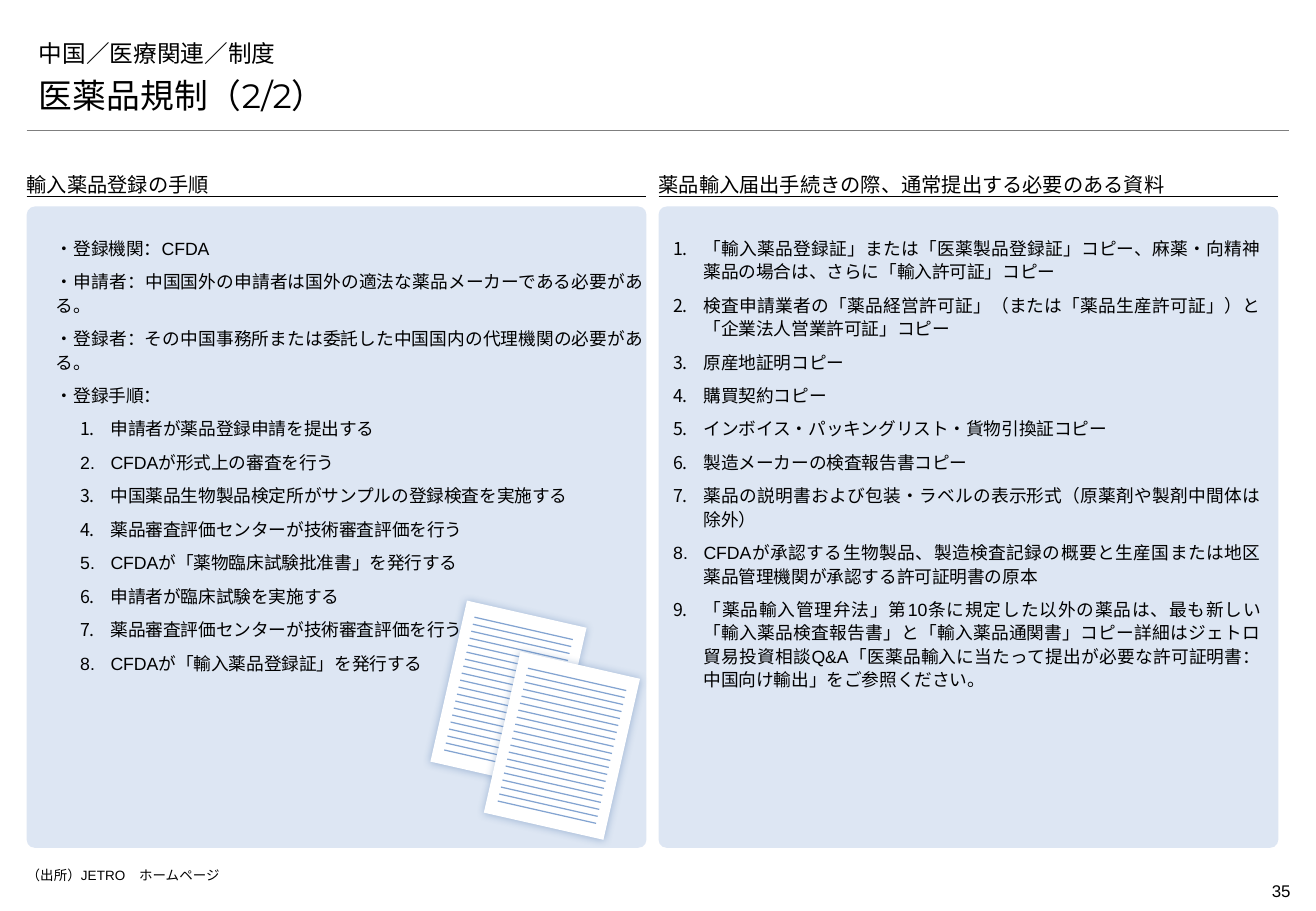
"""Builds the slide on pharmaceutical regulation in China (2/2)."""
from math import cos, radians, sin

from lxml import etree
from pptx import Presentation
from pptx.dml.color import RGBColor
from pptx.enum.shapes import MSO_CONNECTOR, MSO_SHAPE
from pptx.enum.text import MSO_ANCHOR, MSO_AUTO_SIZE, PP_ALIGN
from pptx.oxml.ns import qn
from pptx.util import Inches, Pt

STRAIGHT = MSO_CONNECTOR.STRAIGHT
RECTANGLE, ROUNDED = MSO_SHAPE.RECTANGLE, MSO_SHAPE.ROUNDED_RECTANGLE
TOP, BOTTOM = MSO_ANCHOR.TOP, MSO_ANCHOR.BOTTOM
LEFT, RIGHT, JUSTIFY = PP_ALIGN.LEFT, PP_ALIGN.RIGHT, PP_ALIGN.JUSTIFY

COLORS = {
    "text": "000000",
    "panel": "DDE6F3",
    "title_rule": "7F7F7F",
    "paper": "FFFFFF",
    "paper_line": "83A4D1",
    "paper_shadow": "3D6AA7",
}
BODY_FONT, HEADING_FONT = "Arial", "Montserrat"

TITLE = "中国／医療関連／制度"
SUBTITLE = "医薬品規制（2/2）"
SOURCE = "（出所）JETRO\u3000ホームページ".replace("\u3000", "　")
PAGE_NUMBER = "35"
COLUMNS = [
    {
        "heading": "輸入薬品登録の手順",
        "left": 0.22,
        "margins": (0.24, 0.24, 0.12, 0.24),
        "number_indent": 0.45,
        "points": [
            "・登録機関：CFDA",
            "・申請者：中国国外の申請者は国外の適法な薬品メーカーである必要がある。",
            "・登録者：その中国事務所または委託した中国国内の代理機関の必要がある。",
            "・登録手順：",
        ],
        "numbered": [
            "申請者が薬品登録申請を提出する",
            "CFDAが形式上の審査を行う",
            "中国薬品生物製品検定所がサンプルの登録検査を実施する",
            "薬品審査評価センターが技術審査評価を行う",
            "CFDAが「薬物臨床試験批准書」を発行する",
            "申請者が臨床試験を実施する",
            "薬品審査評価センターが技術審査評価を行う",
            "CFDAが「輸入薬品登録証」を発行する",
        ],
    },
    {
        "heading": "薬品輸入届出手続きの際、通常提出する必要のある資料",
        "left": 5.42,
        "margins": (0.12, 0.24, 0.24, 0.24),
        "number_indent": 0.25,
        "points": [],
        "numbered": [
            "「輸入薬品登録証」または「医薬製品登録証」コピー、麻薬・向精神薬品の場合は、さらに「輸入許可証」コピー",
            "検査申請業者の「薬品経営許可証」（または「薬品生産許可証」）と「企業法人営業許可証」コピー",
            "原産地証明コピー",
            "購買契約コピー",
            "インボイス・パッキングリスト・貨物引換証コピー",
            "製造メーカーの検査報告書コピー",
            "薬品の説明書および包装・ラベルの表示形式（原薬剤や製剤中間体は除外）",
            "CFDAが承認する生物製品、製造検査記録の概要と生産国または地区薬品管理機関が承認する許可証明書の原本",
            "「薬品輸入管理弁法」第10条に規定した以外の薬品は、最も新しい「輸入薬品検査報告書」と"
            "「輸入薬品通関書」コピー詳細はジェトロ貿易投資相談Q&A「医薬品輸入に当たって提出が必要な許可証明書："
            "中国向け輸出」をご参照ください。",
        ],
    },
]

COLUMN_WIDTH, PANEL_TOP, PANEL_HEIGHT = 5.1, 1.7, 5.28
HEADING_TOP, HEADING_RULE = 1.31, 1.62
HANGING = 0.25
PAPERS = [(3.68, 5.04), (4.12, 5.46)]
PAPER_WIDTH, PAPER_HEIGHT, PAPER_TILT = 1.01, 1.36, 12.8
PAPER_LINES, LINE_LENGTH, LINE_STEP = 20, 0.83, 0.059


def color(name):
    """Return the named palette colour."""
    return RGBColor.from_string(COLORS[name])


def place(box, left, top, width, height):
    """Move and size a shape, in inches."""
    box.left, box.top = Inches(left), Inches(top)
    box.width, box.height = Inches(width), Inches(height)


def prepare(frame, margins, anchor=TOP):
    """Set wrapping, insets and anchor of a text frame."""
    frame.word_wrap = True
    frame.auto_size = MSO_AUTO_SIZE.NONE
    frame.vertical_anchor = anchor
    (frame.margin_left, frame.margin_top,
     frame.margin_right, frame.margin_bottom) = map(Inches, margins)


def write(para, text, *, size, font=BODY_FONT, align=LEFT, line=1.0, after=0, bullet="buNone", indent=0):
    """Fill one paragraph with formatted text."""
    para.alignment, para.line_spacing = align, line
    para.space_before, para.space_after = Pt(0), Pt(after)
    properties = para._p.get_or_add_pPr()
    mark = etree.SubElement(properties, qn(f"a:{bullet}"))
    if bullet == "buAutoNum":
        mark.set("type", "arabicPeriod")
    properties.set("marL", str(Inches(indent)))
    properties.set("indent", str(Inches(-HANGING if indent else 0)))
    span = para.add_run()
    span.text = text
    span.font.size, span.font.name = Pt(size), font
    span.font.color.rgb = color("text")


def add_text(page, area, text, margins=(0, 0, 0, 0), anchor=TOP, **style):
    """Add a text box of one paragraph."""
    box = page.shapes.add_textbox(*map(Inches, area))
    prepare(box.text_frame, margins, anchor)
    write(box.text_frame.paragraphs[0], text, **style)


def add_line(page, start, end, name, weight):
    """Add a straight line without shadow."""
    line = page.shapes.add_connector(STRAIGHT, *map(Inches, (*start, *end)))
    line.line.color.rgb, line.line.width = color(name), Pt(weight)
    etree.SubElement(line._element.spPr, qn("a:effectLst"))


def add_block(page, kind, area, name):
    """Add a filled shape without outline or shadow."""
    block = page.shapes.add_shape(kind, *map(Inches, area))
    block.shadow.inherit = False
    block.fill.solid()
    block.fill.fore_color.rgb = color(name)
    block.line.fill.background()
    return block


def add_column(page, column):
    """Add a heading with its rule, a panel and the list on it."""
    left, right = column["left"], column["left"] + COLUMN_WIDTH
    panel = add_block(page, ROUNDED, (left, PANEL_TOP, COLUMN_WIDTH, PANEL_HEIGHT), "panel")
    panel.adjustments[0] = 0.013
    add_line(page, (left, HEADING_RULE), (right, HEADING_RULE), "text", 0.75)
    add_text(page, (left, HEADING_TOP, COLUMN_WIDTH, 0.39), column["heading"],
             margins=(0, 0.05, 0, 0.08), anchor=BOTTOM, size=12, font=HEADING_FONT)
    box = page.shapes.add_textbox(*map(Inches, (left, PANEL_TOP, 5.2, 5.2)))
    frame = box.text_frame
    prepare(frame, column["margins"])
    items = [(text, {}) for text in column["points"]]
    numbering = {"bullet": "buAutoNum", "indent": column["number_indent"]}
    items += [(text, numbering) for text in column["numbered"]]
    for index, (text, style) in enumerate(items):
        para = frame.add_paragraph() if index else frame.paragraphs[0]
        write(para, text, size=10.5, align=JUSTIFY, line=1.1, after=6, **style)


def add_paper(page, left, top):
    """Add a tilted, softly shadowed sheet with ruled lines."""
    sheet = add_block(page, RECTANGLE, (left, top, PAPER_WIDTH, PAPER_HEIGHT), "paper")
    sheet.rotation = PAPER_TILT
    effects = sheet._element.spPr.find(qn("a:effectLst"))
    shadow = etree.SubElement(effects, qn("a:outerShdw"), blurRad=str(Pt(5)), dist="0", dir="0")
    tint = etree.SubElement(shadow, qn("a:srgbClr"), val=COLORS["paper_shadow"])
    etree.SubElement(tint, qn("a:alpha"), val="40000")
    across, down = cos(radians(PAPER_TILT)), sin(radians(PAPER_TILT))
    half_x, half_y = LINE_LENGTH / 2 * across, LINE_LENGTH / 2 * down
    for index in range(PAPER_LINES):
        offset = (index - (PAPER_LINES - 1) / 2) * LINE_STEP
        x = left + PAPER_WIDTH / 2 - offset * down
        y = top + PAPER_HEIGHT / 2 + offset * across
        add_line(page, (x - half_x, y - half_y), (x + half_x, y + half_y), "paper_line", 0.75)


def main():
    """Build and save the deck."""
    deck = Presentation()
    deck.slide_width, deck.slide_height = Inches(10.83), Inches(7.5)
    page = deck.slides.add_slide(deck.slide_layouts[1])
    headers = [(TITLE, 0.26, 0.34, 14), (SUBTITLE, 0.56, 0.44, 20)]
    for box, (text, top, height, size) in zip(page.placeholders, headers):
        place(box, 0.22, top, 10.39, height)
        prepare(box.text_frame, (0.1, 0.05, 0.1, 0.05), BOTTOM)
        write(box.text_frame.paragraphs[0], text, size=size, font=HEADING_FONT)
    add_line(page, (0.22, 1.07), (10.61, 1.07), "title_rule", 0.25)
    for column in COLUMNS:
        add_column(page, column)
    for left, top in PAPERS:
        add_paper(page, left, top)
    add_text(page, (0.22, 7.14, 9.84, 0.16), SOURCE, size=8)
    add_text(page, (9.83, 7.2, 0.79, 0.27), PAGE_NUMBER,
             margins=(0, 0.05, 0, 0.05), size=10, align=RIGHT)
    deck.save("out.pptx")


if __name__ == "__main__":
    main()
